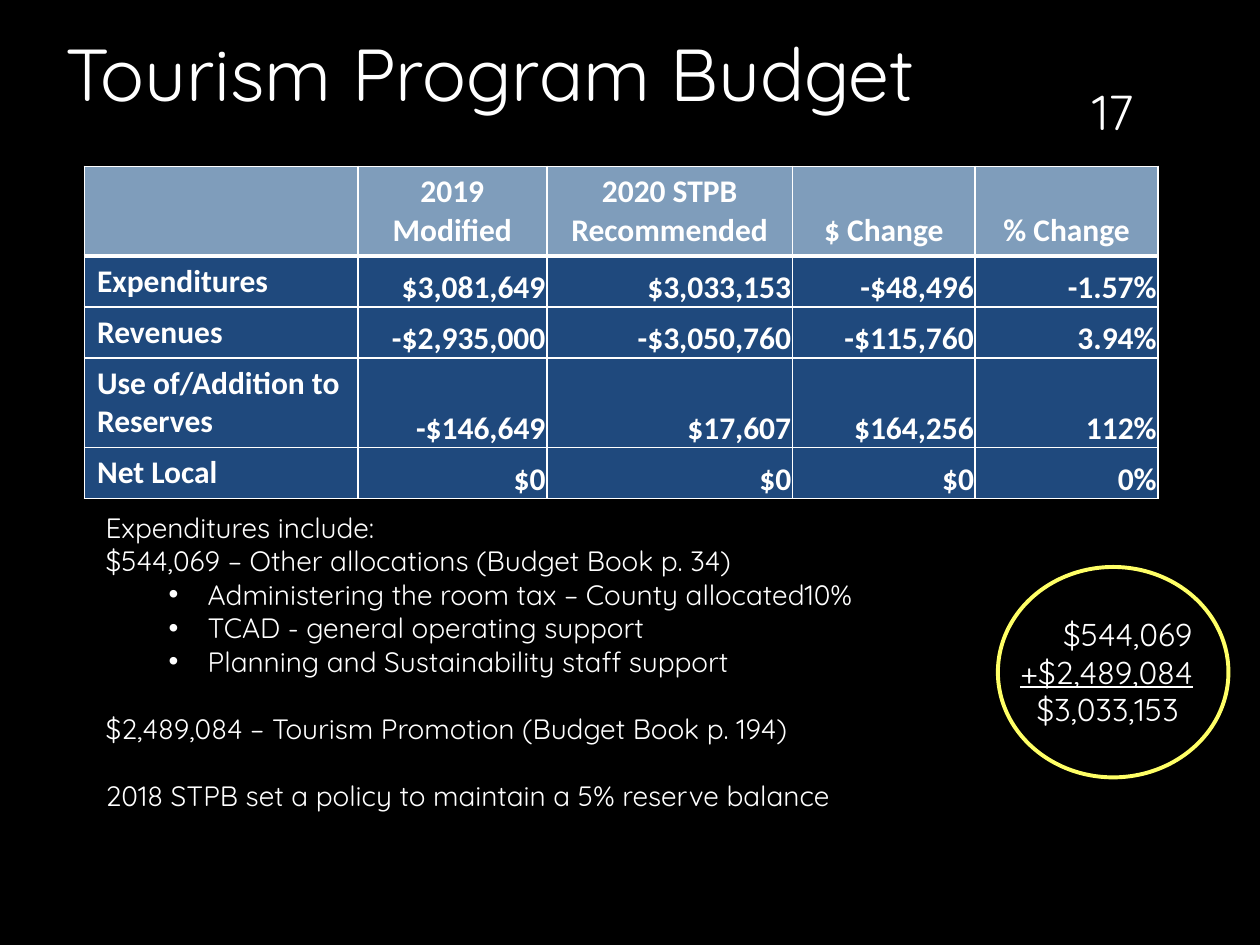
"""Build the tourism program budget slide."""
from typing import NamedTuple

from lxml import etree
from pptx import Presentation
from pptx import util as u
from pptx.dml.color import RGBColor
from pptx.enum import shapes, text
from pptx.oxml import ns

BLACK = RGBColor(0x00, 0x00, 0x00)
WHITE = RGBColor(0xFF, 0xFF, 0xFF)
HEADER_BLUE = RGBColor(0x7F, 0x9D, 0xBB)
BODY_BLUE = RGBColor(0x1F, 0x49, 0x7D)
YELLOW = RGBColor(0xFF, 0xFF, 0x66)
LEFT, CENTER, RIGHT = text.PP_ALIGN.LEFT, text.PP_ALIGN.CENTER, text.PP_ALIGN.RIGHT
TOP, BOTTOM = text.MSO_ANCHOR.TOP, text.MSO_ANCHOR.BOTTOM


class Line(NamedTuple):
    words: str
    indent: float = 0
    bullet: bool = False
    underline: bool = False
    space_before: float = 0


class Block(NamedTuple):
    left: float
    top: float
    width: float
    height: float
    size: float
    lines: list[Line]
    align: text.PP_ALIGN = LEFT
    anchor: text.MSO_ANCHOR = TOP


BLOCKS = [
    Block(0.42, 0.17, 7.72, 1.53, 42, [Line("Tourism Program Budget")]),
    Block(8.49, 0.32, 0.69, 0.84, 28, [Line("17")], CENTER, BOTTOM),
    Block(0.74, 4, 8.51, 2.52, 16, [
        Line("Expenditures include:"),
        Line("$544,069 – Other allocations (Budget Book p. 34)"),
        Line("Administering the room tax – County allocated10%", 0.81, bullet=True),
        Line("TCAD - general operating support", 0.81, bullet=True),
        Line("Planning and Sustainability staff support", 0.81, bullet=True),
        Line("$2,489,084 – Tourism Promotion (Budget Book p. 194)", space_before=19.2),
        Line("2018 STPB set a policy to maintain a 5% reserve balance", space_before=19.2),
    ]),
    Block(8, 4.83, 1.83, 1.01, 18, [
        Line("$544,069", 0.34),
        Line("+$2,489,084", underline=True),
        Line("$3,033,153", 0.13),
    ]),
]
COLUMN_WIDTHS = [2.17, 1.5, 1.95, 1.45, 1.45]
ROW_HEIGHTS = [0.5, 0.37, 0.37, 0.67, 0.37]
BUDGET = [
    ["", "2019\nModified", "2020 STPB Recommended", "$ Change", "% Change"],
    ["Expenditures", "$3,081,649", "$3,033,153", "-$48,496", "-1.57%"],
    ["Revenues", "-$2,935,000", "-$3,050,760", "-$115,760", "3.94%"],
    ["Use of/Addition to Reserves", "-$146,649", "$17,607", "$164,256", "112%"],
    ["Net Local", "$0", "$0", "$0", "0%"],
]


def style_font(para, name: str, size: float) -> None:
    para.font.name = name
    para.font.size = u.Pt(size)
    para.font.color.rgb = WHITE


def add_block(page, block: Block) -> None:
    box = page.shapes.add_textbox(*map(u.Inches, block[:4]))
    frame = box.text_frame
    frame.word_wrap = True
    frame.vertical_anchor = block.anchor
    for index, line in enumerate(block.lines):
        para = frame.paragraphs[0] if index == 0 else frame.add_paragraph()
        para.text = line.words
        para.alignment = block.align
        if line.space_before:
            para.space_before = u.Pt(line.space_before)
        properties = para._p.get_or_add_pPr()
        properties.set("marL", str(u.Inches(line.indent)))
        if line.bullet:
            properties.set("indent", str(u.Inches(-0.31)))
            etree.SubElement(properties, ns.qn("a:buFont"), typeface="Arial")
            etree.SubElement(properties, ns.qn("a:buChar"), char="•")
        style_font(para, "Quicksand", block.size)
        if line.underline:
            para.font.underline = True


def add_borders(cell, top: float, bottom: float) -> None:
    properties = cell._tc.get_or_add_tcPr()
    for side, width in {"L": 1, "R": 1, "T": top, "B": bottom}.items():
        edge = etree.SubElement(properties, ns.qn(f"a:ln{side}"), w=str(u.Pt(width)))
        fill = etree.SubElement(edge, ns.qn("a:solidFill"))
        etree.SubElement(fill, ns.qn("a:srgbClr"), val=str(WHITE))


def fill_cell(cell, words: str, row: int, column: int) -> None:
    header = row == 0
    add_borders(cell, top=3 if row == 1 else 1, bottom=3 if header else 1)
    cell.fill.solid()
    cell.fill.fore_color.rgb = HEADER_BLUE if header else BODY_BLUE
    cell.vertical_anchor = BOTTOM if header or column else TOP
    if column and not header:
        cell.margin_left = cell.margin_right = cell.margin_top = u.Inches(0.01)
        cell.margin_bottom = 0
    cell.text = words
    for para in cell.text_frame.paragraphs:
        para.alignment = CENTER if header else RIGHT if column else LEFT
        style_font(para, "Calibri", 18)
        para.font.bold = True


def add_budget_table(page) -> None:
    table = page.shapes.add_table(
        len(BUDGET), len(COLUMN_WIDTHS), u.Inches(0.67), u.Inches(1.32),
        u.Inches(sum(COLUMN_WIDTHS)), u.Inches(sum(ROW_HEIGHTS))).table
    for column, width in zip(table.columns, COLUMN_WIDTHS):
        column.width = u.Inches(width)
    for row, height in zip(table.rows, ROW_HEIGHTS):
        row.height = u.Inches(height)
    for row, entries in enumerate(BUDGET):
        for column, words in enumerate(entries):
            fill_cell(table.cell(row, column), words, row, column)


def add_total_ring(page) -> None:
    ring = page.shapes.add_shape(
        shapes.MSO_SHAPE.OVAL, u.Inches(7.92), u.Inches(4.5), u.Inches(1.83), u.Inches(1.67))
    ring.shadow.inherit = False
    ring.fill.background()
    ring.line.color.rgb = YELLOW
    ring.line.width = u.Pt(2.25)


def main() -> None:
    deck = Presentation()
    deck.slide_width, deck.slide_height = u.Inches(10), u.Inches(7.5)
    page = deck.slides.add_slide(deck.slide_layouts[6])
    page.background.fill.solid()
    page.background.fill.fore_color.rgb = BLACK
    add_budget_table(page)
    for block in BLOCKS:
        add_block(page, block)
    add_total_ring(page)
    deck.save("out.pptx")


if __name__ == "__main__":
    main()
